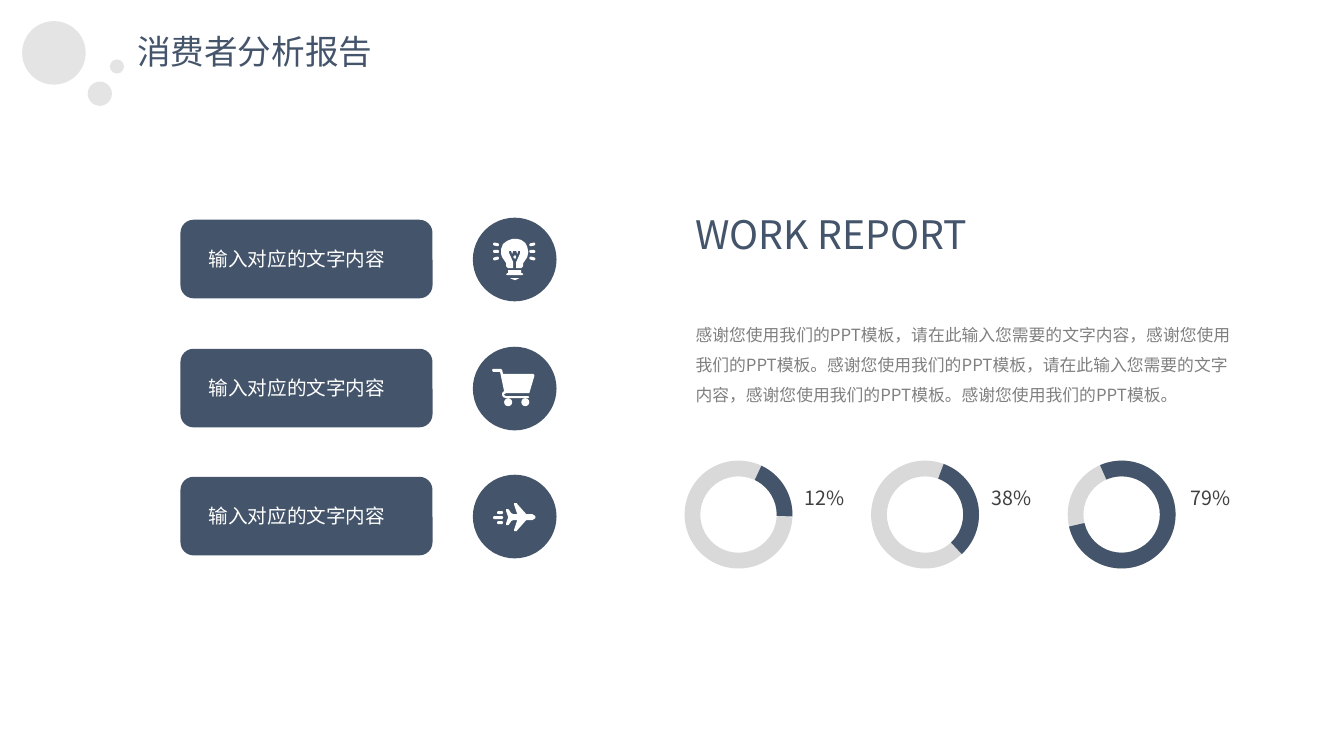
from lxml import etree
from pptx import Presentation
from pptx.dml.color import RGBColor
from pptx.enum.shapes import MSO_SHAPE
from pptx.enum.text import MSO_ANCHOR, MSO_AUTO_SIZE, PP_ALIGN
from pptx.oxml.ns import qn
from pptx.util import Emu, Pt

CIRCLE = MSO_SHAPE.OVAL
CONNECTOR_DOT = MSO_SHAPE.FLOWCHART_CONNECTOR
ROUNDED = MSO_SHAPE.ROUNDED_RECTANGLE
ARC = MSO_SHAPE.BLOCK_ARC
TOP = MSO_ANCHOR.TOP
LEFT = PP_ALIGN.LEFT
GROW = MSO_AUTO_SIZE.SHAPE_TO_FIT_TEXT

PX = 9144  # EMU per px, 100 px to the inch
FONT = "Noto Sans CJK SC"
NAVY, WHITE, SILVER = "44546A", "FFFFFF", "D9D9D9"
CHARCOAL, GREY = "404040", "808080"


def rgb(color):
    return RGBColor.from_string(color)


class SlideBuilder:
    def __init__(self, slide):
        self.slide = slide

    def paint(self, shape, color, alpha=None):
        shape.shadow.inherit = False
        shape.fill.solid()
        shape.fill.fore_color.rgb = rgb(color)
        shape.line.fill.background()
        if alpha:
            tone = shape.element.find(".//" + qn("a:srgbClr"))
            etree.SubElement(tone, qn("a:alpha"), val=str(alpha * 1000))
        return shape

    def shape(self, kind, x, y, w, h, color, alpha=None, parent=None):
        shapes = (parent or self.slide).shapes
        return self.paint(shapes.add_shape(kind, x * PX, y * PX, w * PX, h * PX), color, alpha)

    def arc(self, x, y, size, start, end, color):
        """Ring section between two angles in degrees, clockwise from the right."""
        ring = self.shape(ARC, x, y, size, size, color)
        ring.adjustments[0] = start * 0.6
        ring.adjustments[1] = end * 0.6
        ring.adjustments[2] = 0.146

    def fill_text(self, box, text, size, color, wrap=False, spacing=None):
        frame = box.text_frame
        frame.text = text
        frame.word_wrap = wrap
        frame.auto_size = GROW
        frame.vertical_anchor = TOP
        paragraph = frame.paragraphs[0]
        paragraph.alignment = LEFT
        if spacing:
            paragraph.line_spacing = spacing
        font = paragraph.font
        font.size = Pt(size)
        font.color.rgb = rgb(color)
        font.name = FONT
        latin = box.element.find(".//" + qn("a:latin"))
        latin.addnext(etree.Element(qn("a:ea"), typeface=FONT))

    def title(self, x, y, w, h, text, size, color):
        heading = self.slide.shapes.title
        heading.left, heading.top = Emu(x * PX), Emu(y * PX)
        heading.width, heading.height = Emu(w * PX), Emu(h * PX)
        self.fill_text(heading, text, size, color)

    def text(self, x, y, w, h, text, size, color, **style):
        box = self.slide.shapes.add_textbox(x * PX, y * PX, w * PX, h * PX)
        self.fill_text(box, text, size, color, **style)

    def icon(self, outlines, bars=(), dots=()):
        group = self.slide.shapes.add_group_shape()
        for start, *rest in outlines:
            builder = group.shapes.build_freeform(*start, scale=PX)
            builder.add_line_segments(rest, close=True)
            self.paint(builder.convert_to_shape(), WHITE)
        for x, y, w, h, tilt in bars:
            bar = self.shape(ROUNDED, x, y, w, h, WHITE, parent=group)
            bar.adjustments[0] = 0.5
            bar.rotation = tilt
        for x, y, size in dots:
            self.shape(CIRCLE, x, y, size, size, WHITE, parent=group)


# Icon outlines
BULB = [(521, 258), (523, 255), (524, 250), (523, 245), (521, 241), (517, 238), (513, 237),
        (508, 237), (503, 239), (499, 242), (497, 247), (497, 252), (498, 255), (500, 258),
        (502, 261), (502, 264), (504, 266), (509, 266), (509, 260), (505, 251), (505, 249),
        (507, 249), (508, 252), (509, 249), (512, 249), (513, 252), (514, 249), (516, 249),
        (516, 251), (512, 260), (512, 266), (517, 266), (519, 264), (519, 261)]
FILAMENT = [(511, 253), (509, 255), (511, 257), (512, 255)]
SOCKET = [(519, 272), (518, 271), (517, 271), (517, 268), (504, 268), (504, 271),
          (503, 271), (502, 272), (503, 273), (518, 273)]
BULB_TIP = [(506, 276), (515, 276), (513, 277), (511, 278), (508, 277)]
RAYS = [(489 + 36 * right, y, 6, 3, tilt * (1 - 2 * right))
        for right in (0, 1) for y, tilt in ((241, 13), (248, 0), (255, -13))]
CART = [(502, 390), (524, 390), (525, 390), (530, 373), (530, 372), (529, 371), (528, 371),
        (499, 371), (498, 367), (497, 366), (489, 366), (488, 367), (489, 369), (496, 369),
        (500, 388), (498, 390), (498, 392), (499, 394), (502, 395), (524, 395), (525, 394),
        (524, 393), (502, 393), (500, 392), (500, 391)]
WHEELS = [(500, 395, 8), (517, 395, 8)]
PLANE_TOP = [(531, 512), (528, 510), (522, 510), (521, 509), (513, 500), (513, 499),
             (511, 499), (510, 499), (510, 501), (513, 510), (509, 510), (507, 509),
             (505, 506), (504, 505), (502, 505), (502, 507), (503, 510)]
PLANE = PLANE_TOP + [(504, 513)] + [(x, 1026 - y) for x, y in reversed(PLANE_TOP)]
TRAILS = [(493, 507, 6, 3, 0), (489, 512, 10, 3, 0), (493, 517, 6, 3, 0)]

TOPICS = [
    (216, dict(outlines=[SOCKET, FILAMENT, BULB, BULB_TIP], bars=RAYS)),
    (344, dict(outlines=[CART], dots=WHEELS)),
    (471, dict(outlines=[PLANE], bars=TRAILS)),
]
# Ring left, label left, share shown, start and end angle
SHARES = [
    (679, 788, "12%", 295.16, 2.1),
    (864, 974, "38%", 290.21, 47.1),
    (1059, 1171, "79%", 246.4, 167.1),
]
SUMMARY = ("感谢您使用我们的PPT模板，请在此输入您需要的文字内容，感谢您使用我们的PPT模板。"
           "感谢您使用我们的PPT模板，请在此输入您需要的文字内容，感谢您使用我们的PPT模板。"
           "感谢您使用我们的PPT模板。")


def main():
    deck = Presentation()
    deck.slide_width, deck.slide_height = Emu(1333 * PX), Emu(750 * PX)
    page = SlideBuilder(deck.slides.add_slide(deck.slide_layouts[5]))

    # Header
    for x, y, size in ((22, 21, 63), (87, 81, 24), (109, 59, 14)):
        page.shape(CONNECTOR_DOT, x, y, size, size, SILVER, alpha=70)
    page.title(126, 26, 256, 50, "消费者分析报告", 24, NAVY)

    # Topic rows
    for top, icon in TOPICS:
        page.shape(ROUNDED, 179, top + 2, 250, 78, NAVY)
        page.shape(CIRCLE, 469, top, 83, 83, NAVY)
        page.text(197, top + 24, 197, 34, "输入对应的文字内容", 14, WHITE)
        page.icon(**icon)

    # Share rings
    for ring_left, label_left, share, start, end in SHARES:
        page.arc(ring_left, 457, 107, 3.05, 2.1, SILVER)
        page.arc(ring_left, 457, 107, start, end, NAVY)
        page.text(label_left, 477, 62, 34, share, 14, CHARCOAL)

    # Report summary
    page.text(680, 204, 308, 57, "WORK REPORT", 28, NAVY)
    page.text(680, 307, 551, 96, SUMMARY, 12, GREY, wrap=True, spacing=1.5)

    deck.save("out.pptx")


if __name__ == "__main__":
    main()
